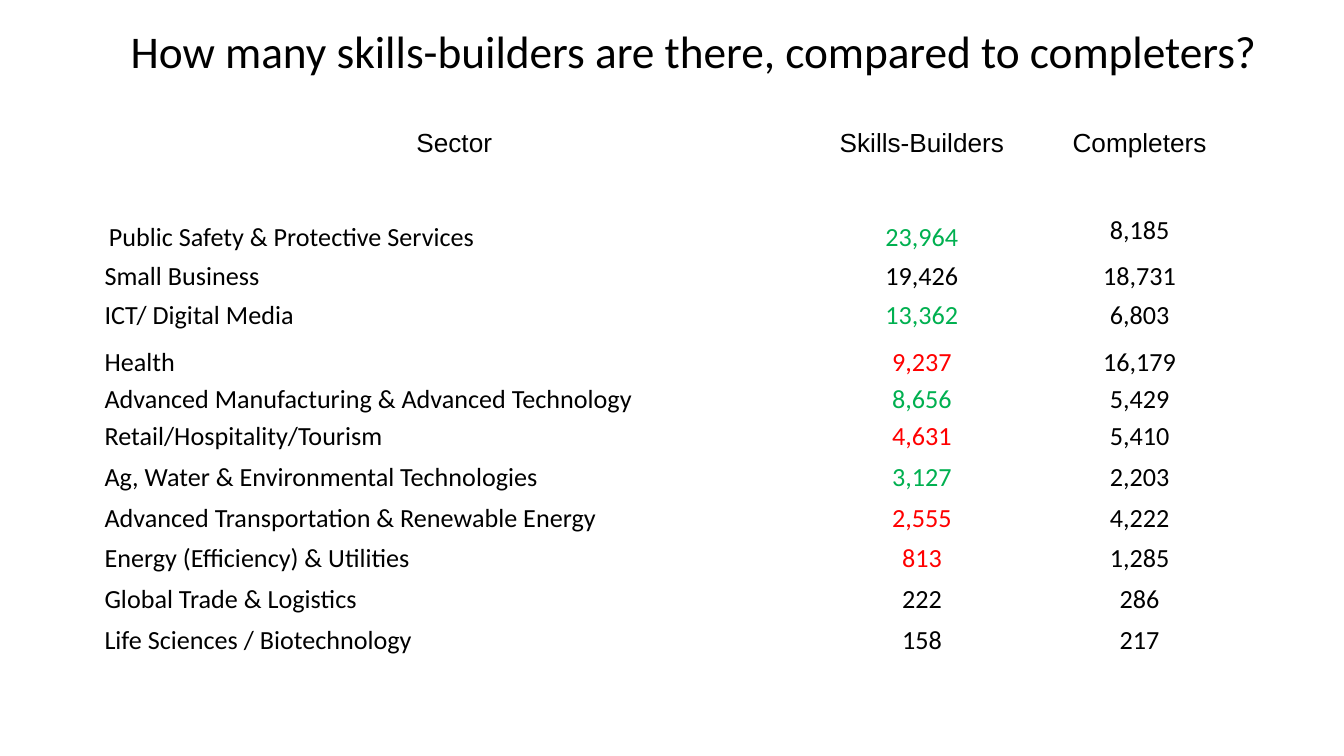
from pptx import Presentation
from pptx.dml.color import RGBColor
from pptx.enum.text import MSO_ANCHOR, MSO_AUTO_SIZE, PP_ALIGN
from pptx.util import Pt

BLACK = RGBColor(0x00, 0x00, 0x00)
GREEN = RGBColor(0x00, 0xB0, 0x50)
RED = RGBColor(0xFF, 0x00, 0x00)

TITLE = "How many skills-builders are there, compared to completers?"
HEADERS = ("Sector", "Skills-Builders", "Completers")
# Sector, skills-builders, completers, colour of the skills-builders figure
LARGEST_SECTORS = [
    ("Public Safety & Protective Services", "23,964", "8,185", GREEN),
    ("Small Business", "19,426", "18,731", BLACK),
    ("ICT/ Digital Media", "13,362", "6,803", GREEN),
]
OTHER_SECTORS = [
    ("Health", "9,237", "16,179", RED),
    ("Advanced Manufacturing & Advanced Technology", "8,656", "5,429", GREEN),
    ("Retail/Hospitality/Tourism", "4,631", "5,410", RED),
    ("Ag, Water & Environmental Technologies", "3,127", "2,203", GREEN),
    ("Advanced Transportation & Renewable Energy", "2,555", "4,222", RED),
    ("Energy (Efficiency) & Utilities", "813", "1,285", RED),
    ("Global Trade & Logistics", "222", "286", BLACK),
    ("Life Sciences / Biotechnology", "158", "217", BLACK),
]

COLUMN_WIDTHS = (384.5, 116.6, 116.6)
LARGEST_ROW_HEIGHTS = (49.7, 23.8, 20.9, 25.9)
OTHER_ROW_HEIGHTS = (19.8,) * 2 + (21.83,) * 6
TABLE_LEFT, TABLE_TOP = 51.1, 65.5
ROOMY = (7.2, 3.6)
TIGHT = (4.9, 0)


def write_text(text_frame, text, *, size=14, font="Calibri", color=BLACK,
               align=PP_ALIGN.CENTER):
    paragraph = text_frame.paragraphs[0]
    paragraph.alignment = align
    run = paragraph.add_run()
    run.text = text
    run.font.size = Pt(size)
    run.font.name = font
    run.font.color.rgb = color


def fill_cell(cell, text, margins=TIGHT, **text_format):
    horizontal, vertical = margins
    cell.margin_left = cell.margin_right = Pt(horizontal)
    cell.margin_top = cell.margin_bottom = Pt(vertical)
    cell.vertical_anchor = MSO_ANCHOR.TOP
    cell.fill.background()
    write_text(cell.text_frame, text, **text_format)


def add_title(slide, left, top, width, height):
    text_frame = slide.shapes.add_textbox(
        Pt(left), Pt(top), Pt(width), Pt(height)).text_frame
    text_frame.word_wrap = True
    text_frame.auto_size = MSO_AUTO_SIZE.NONE
    text_frame.vertical_anchor = MSO_ANCHOR.MIDDLE
    # The deep bottom margin lifts the single line to the top of the box.
    text_frame.margin_top = Pt(0)
    text_frame.margin_bottom = Pt(35.8)
    write_text(text_frame, TITLE, size=24.3)


def add_sector_table(slide, left, top, row_heights, sectors, headers=None):
    """Place the sectors in a plain table, below a header row if one is given."""
    table = slide.shapes.add_table(
        len(row_heights), len(COLUMN_WIDTHS), Pt(left), Pt(top),
        Pt(sum(COLUMN_WIDTHS)), Pt(sum(row_heights))).table
    table.first_row = table.horz_banding = False
    for column, width in zip(table.columns, COLUMN_WIDTHS):
        column.width = Pt(width)
    for row, height in zip(table.rows, row_heights):
        row.height = Pt(height)

    first_sector_row = 0
    if headers:
        first_sector_row = 1
        for column, header in enumerate(headers):
            fill_cell(table.cell(0, column), header, ROOMY, font="Arial")

    for row, (sector, builders, completers, color) in enumerate(
            sectors, first_sector_row):
        margins = ROOMY if headers and row == first_sector_row else TIGHT
        fill_cell(table.cell(row, 0), sector, margins, align=PP_ALIGN.LEFT)
        fill_cell(table.cell(row, 1), builders, margins, color=color)
        fill_cell(table.cell(row, 2), completers)


def main():
    presentation = Presentation()
    presentation.slide_width = Pt(720)
    presentation.slide_height = Pt(405)
    slide = presentation.slides.add_slide(presentation.slide_layouts[6])

    add_title(slide, 47.5, 23.8, 648, 41.8)
    add_sector_table(slide, TABLE_LEFT, TABLE_TOP, LARGEST_ROW_HEIGHTS,
                     LARGEST_SECTORS, HEADERS)
    add_sector_table(slide, TABLE_LEFT, TABLE_TOP + sum(LARGEST_ROW_HEIGHTS),
                     OTHER_ROW_HEIGHTS, OTHER_SECTORS)
    presentation.save("out.pptx")


if __name__ == "__main__":
    main()
